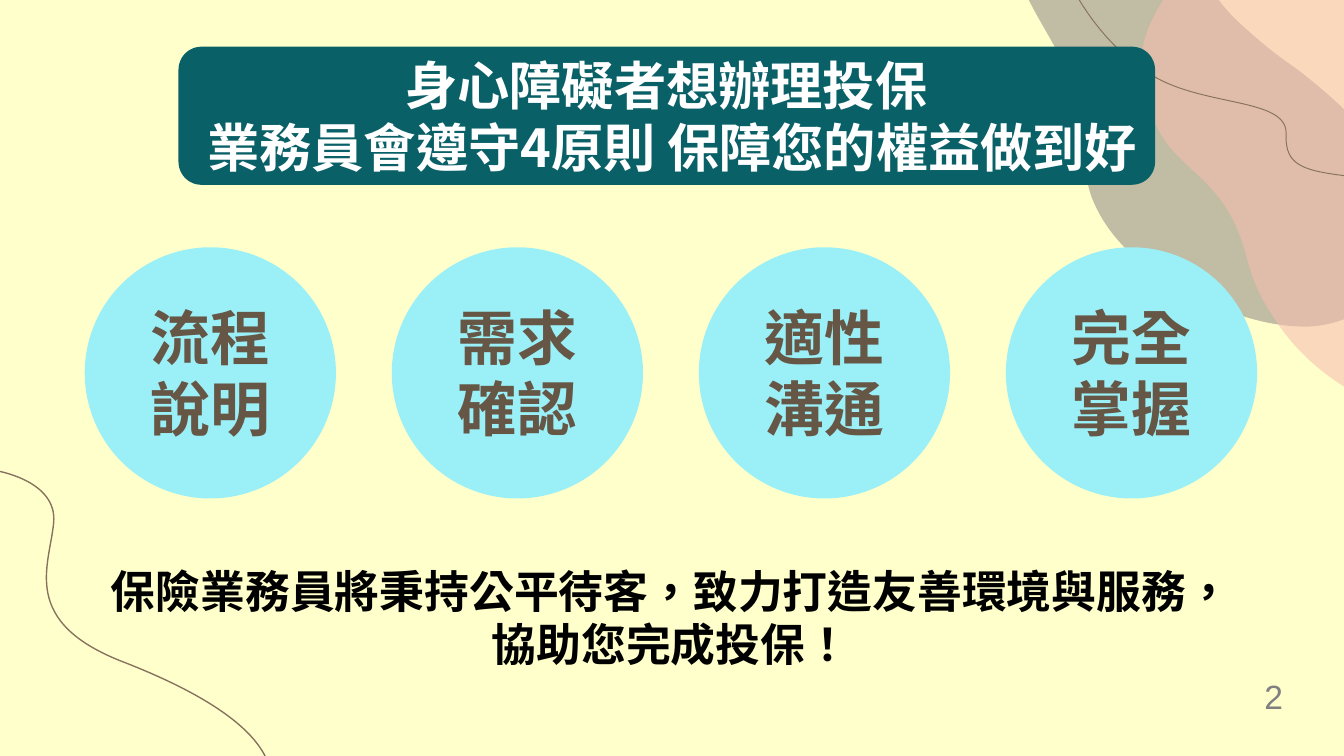
from lxml import etree
from pptx import Presentation
from pptx import util as u
from pptx.dml.color import RGBColor
from pptx.enum import shapes, text
from pptx.oxml.ns import qn

CJK_FONT = "Noto Sans CJK SC"
CIRCLE_LABELS = ["流程\n說明", "需求確認", "適性溝通", "完全掌握"]
CIRCLE_LEFT, CIRCLE_TOP, CIRCLE_SIZE, CIRCLE_PITCH = 45.4, 132.5, 134.6, 164.5

# Curve points: a start, then two control points and an end for each curve.
# One curve unit is a hundredth of an inch.
CURVE_UNIT = u.Pt(0.72)
GREY_BLOB = [
    (1047, 167), (1045, 119), (1000, 78), (963, 50), (948, 40), (934, 28), (921, 16),
    (907, 3), (897, -14), (886, -30), (867, -55), (844, -84), (811, -91),
    (784, -96), (756, -80), (753, -51), (753, -48), (753, -45), (753, -42),
    (754, -13), (774, 14), (787, 39), (797, 55), (804, 72), (805, 91),
    (807, 110), (806, 129), (812, 146), (822, 173), (844, 194), (868, 209),
    (898, 227), (937, 244), (974, 243), (997, 242), (1020, 231), (1033, 213),
    (1034, 212), (1036, 210), (1037, 209), (1045, 194), (1048, 180), (1047, 167),
]
PINK_BLOB = [
    (850, 39), (848, 53), (851, 67), (858, 88), (874, 130), (912, 128), (928, 193),
    (932, 208), (938, 222), (947, 235), (963, 261), (987, 282), (1015, 296),
    (1017, 297), (1019, 297), (1020, 296), (1040, 302), (1060, 302), (1077, 287),
    (1093, 273), (1101, 254), (1103, 234), (1104, 226), (1105, 217), (1104, 209),
    (1101, 174), (1084, 143), (1069, 112), (1054, 81), (1040, 49), (1022, 20),
    (997, -18), (930, -98), (888, -34), (865, 0), (852, 18), (850, 39),
]
TOP_LINE = [
    (796, -13), (796, -13), (815, 29), (854, 54), (892, 80), (957, 72), (957, 99),
    (956, 125), (969, 128), (1022, 133),
]
BOTTOM_LINE = [
    (-4, 350), (-4, 350), (43, 357), (40, 389), (37, 421), (14, 463), (93, 493),
    (172, 524), (194, 551), (200, 569),
]


def color(hex_code):
    return RGBColor.from_string(hex_code)


def paint(shape, hex_code):
    shape.shadow.inherit = False
    shape.fill.solid()
    shape.fill.fore_color.rgb = color(hex_code)
    shape.line.fill.background()


def place(shape, left, top, width, height):
    shape.left, shape.top = u.Pt(left), u.Pt(top)
    shape.width, shape.height = u.Pt(width), u.Pt(height)


def add_curve(slide, points, closed):
    """Build a freeform on the points, then join each three segments into one curve."""
    start, *rest = points
    builder = slide.shapes.build_freeform(*start, scale=CURVE_UNIT)
    builder.add_line_segments(rest, close=closed)
    shape = builder.convert_to_shape()
    segments = list(shape._element.iter(qn("a:lnTo")))
    for index in range(0, len(rest), 3):
        first, *others = segments[index:index + 3]
        curve = etree.Element(qn("a:cubicBezTo"))
        first.addprevious(curve)
        for segment in (first, *others):
            curve.append(segment[0])
            segment.getparent().remove(segment)
    return shape


def add_blob(slide, points, hex_code, opacity):
    blob = add_curve(slide, points, True)
    paint(blob, hex_code)
    fill_color = blob.fill._xPr.find(qn("a:solidFill"))[0]
    etree.SubElement(fill_color, qn("a:alpha"), val=str(opacity * 1000))


def add_wavy_line(slide, points, width):
    line = add_curve(slide, points, False)
    line.shadow.inherit = False
    line.fill.background()
    line.line.color.rgb = color("87725D")
    line.line.width = u.Pt(width)


def write_centered(shape, content, size, hex_code, latin_font=CJK_FONT, side_margin=7.2):
    """Write bold centred text with a fixed line pitch, in the middle of the shape."""
    frame = shape.text_frame
    frame.text = content
    frame.word_wrap = True
    frame.auto_size = text.MSO_AUTO_SIZE.NONE
    frame.vertical_anchor = text.MSO_ANCHOR.MIDDLE
    frame.margin_left = frame.margin_right = u.Pt(side_margin)
    frame.margin_top = frame.margin_bottom = 0
    for paragraph in frame.paragraphs:
        paragraph.alignment = text.PP_ALIGN.CENTER
        paragraph.line_spacing = u.Pt(1.19 * size)
        paragraph.space_before = u.Pt(0)
        for run in paragraph.runs:
            run.font.name = latin_font
            run.font.size = u.Pt(size)
            run.font.bold = True
            run.font.color.rgb = color(hex_code)
            run.font._element.set("lang", "zh-TW")
            etree.SubElement(run.font._element, qn("a:ea"), typeface=CJK_FONT)


def remove_bullets(shape):
    for paragraph in shape.text_frame.paragraphs:
        properties = paragraph._p.get_or_add_pPr()
        properties.set("marL", "0")
        properties.set("indent", "0")
        etree.SubElement(properties, qn("a:buNone"))


def add_banner(slide):
    banner = slide.shapes.add_shape(shapes.MSO_SHAPE.ROUNDED_RECTANGLE,
                                    u.Pt(95.6), u.Pt(25), u.Pt(523.2), u.Pt(74))
    paint(banner, "096067")
    title = slide.shapes.title
    place(title, 95.6, 24.5, 529, 75)
    write_centered(title, "身心障礙者想辦理投保 \n業務員會遵守4原則 保障您的權益做到好",
                   28, "FFFFFF", side_margin=3)
    banner._element.addnext(title._element)


def add_circle(slide, index, label):
    circle = slide.shapes.add_shape(
        shapes.MSO_SHAPE.OVAL, u.Pt(CIRCLE_LEFT + index * CIRCLE_PITCH),
        u.Pt(CIRCLE_TOP), u.Pt(CIRCLE_SIZE), u.Pt(CIRCLE_SIZE))
    paint(circle, "9BF0F7")
    write_centered(circle, label, 32, "655646")


def add_closing(slide):
    body = slide.placeholders[1]
    place(body, 45.4, 298, 628, 65.5)
    write_centered(body, "保險業務員將秉持公平待客，致力打造友善環境與服務，\n協助您完成投保！",
                   24, "000000", latin_font="Arial")
    remove_bullets(body)
    slide.shapes[-1]._element.addnext(body._element)


def add_page_number(slide, number):
    box = slide.shapes.add_textbox(u.Pt(670.3), u.Pt(358.6), u.Pt(49.7), u.Pt(37.4))
    box.text_frame.word_wrap = True
    box.text_frame.text = number
    font = box.text_frame.paragraphs[0].runs[0].font
    font.name, font.size = "Arial", u.Pt(18)
    font.color.rgb = color("808080")


def main():
    presentation = Presentation()
    presentation.slide_width, presentation.slide_height = u.Pt(720), u.Pt(405)
    slide = presentation.slides.add_slide(presentation.slide_layouts[1])
    slide.background.fill.solid()
    slide.background.fill.fore_color.rgb = color("FFFFCC")
    add_blob(slide, GREY_BLOB, "847B7D", 50)
    add_blob(slide, PINK_BLOB, "F7BCAF", 58)
    add_wavy_line(slide, TOP_LINE, 0.5)
    add_wavy_line(slide, BOTTOM_LINE, 0.75)
    add_page_number(slide, "2")
    add_banner(slide)
    for index, label in enumerate(CIRCLE_LABELS):
        add_circle(slide, index, label)
    add_closing(slide)
    presentation.save("out.pptx")


if __name__ == "__main__":
    main()
